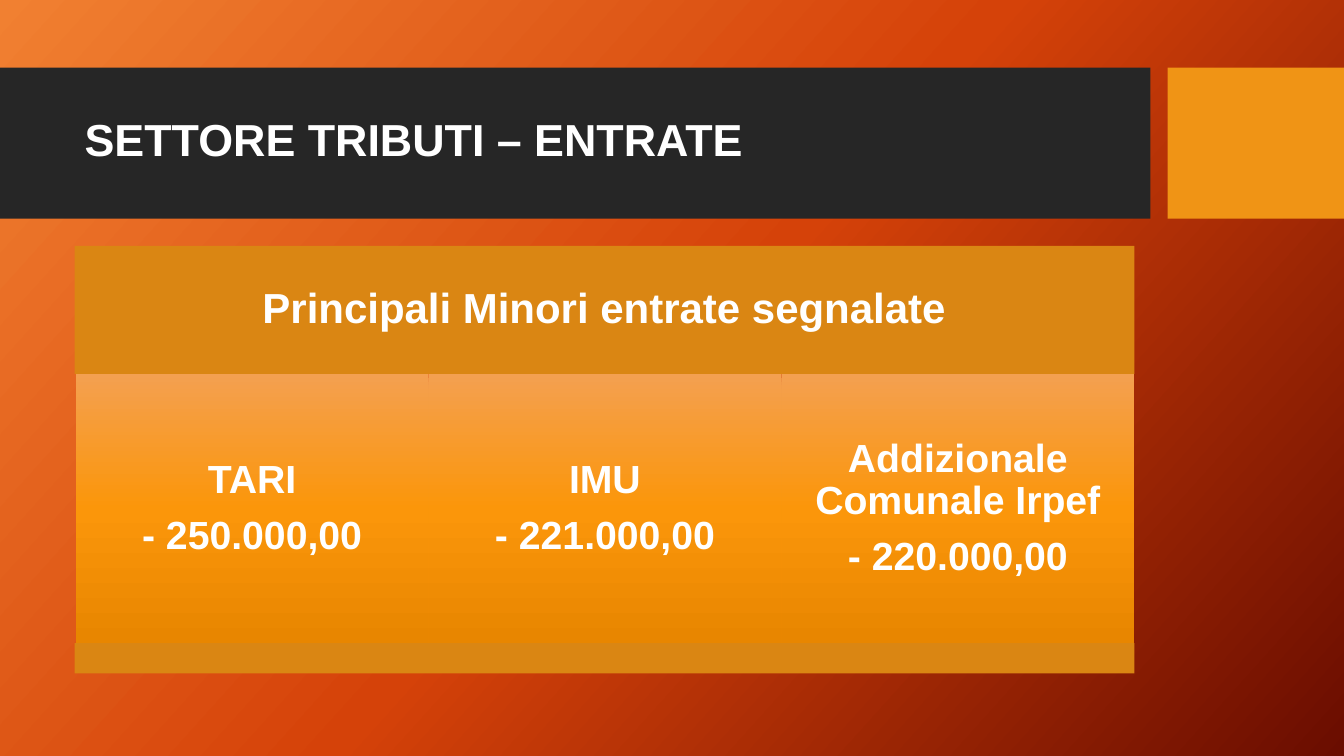
from lxml.etree import SubElement
from pptx import Presentation
from pptx.dml.color import RGBColor
from pptx.enum.shapes import MSO_SHAPE
from pptx.enum.text import MSO_ANCHOR, PP_ALIGN
from pptx.oxml.ns import qn
from pptx.util import Inches, Pt

TITLE = "SETTORE TRIBUTI – ENTRATE"
HEADING = "Principali Minori entrate segnalate"
REVENUES = [
    ("TARI", "- 250.000,00"),
    ("IMU", "- 221.000,00"),
    ("Addizionale Comunale Irpef", "- 220.000,00"),
]
PAGE_STOPS = [(0, "F18031"), (50, "D54209"), (100, "6A0D00")]
CARD_STOPS = [(0, "F4A050"), (50, "FB960A"), (100, "E88600")]
DARK, ACCENT, BAND, WHITE = "262626", "F09415", "DA8613", "FFFFFF"

TABLE_LEFT, TABLE_WIDTH = 0.74, 10.51
HEADING_TOP, HEADING_HEIGHT = 2.44, 1.27
CARD_LEFT, CARD_WIDTH, CARD_HEIGHT = 0.75, 3.5, 2.67
CARD_TOP = HEADING_TOP + HEADING_HEIGHT


def color(value):
    return RGBColor.from_string(value)


def set_gradient(fill, element, stops, angle):
    fill.gradient()
    gradient = next(element.iter(qn("a:gradFill")))
    stop_list = gradient.find(qn("a:gsLst"))
    for stop in list(stop_list):
        stop_list.remove(stop)
    for position, value in stops:
        stop = SubElement(stop_list, qn("a:gs"), pos=str(position * 1000))
        SubElement(stop, qn("a:srgbClr"), val=value)
    gradient.find(qn("a:lin")).set("ang", str(angle * 60000))


def add_block(left, top, width, height, fill):
    box = page.shapes.add_shape(
        MSO_SHAPE.RECTANGLE, Inches(left), Inches(top), Inches(width), Inches(height))
    box.shadow.inherit = False
    box.line.fill.background()
    if isinstance(fill, str):
        box.fill.solid()
        box.fill.fore_color.rgb = color(fill)
    else:
        set_gradient(box.fill, box.element, fill, 90)
    return box


def write(box, lines, size, align=PP_ALIGN.CENTER, inset=0.12):
    frame = box.text_frame
    frame.word_wrap = True
    frame.vertical_anchor = MSO_ANCHOR.MIDDLE
    frame.margin_left = frame.margin_right = Inches(inset)
    frame.margin_top = frame.margin_bottom = Inches(inset)
    frame.text = "\n".join(lines)
    for para in frame.paragraphs:
        para.alignment = align
        para.line_spacing = 0.9
        para.space_after = Pt(size * 0.35)
        for span in para.runs:
            span.font.name = "Arial"
            span.font.size = Pt(size)
            span.font.bold = True
            span.font.color.rgb = color(WHITE)


deck = Presentation()
deck.slide_width, deck.slide_height = Inches(13.33), Inches(7.5)
page = deck.slides.add_slide(deck.slide_layouts[6])
set_gradient(page.background.fill, page.element, PAGE_STOPS, 42)

add_block(0, 0.67, 11.41, 1.5, DARK)
add_block(11.58, 0.67, 1.75, 1.5, ACCENT)
title = page.shapes.add_textbox(Inches(0.74), Inches(0.82), Inches(10.51), Inches(1.18))
write(title, [TITLE], 32, PP_ALIGN.LEFT, 0.1)

heading = add_block(TABLE_LEFT, HEADING_TOP, TABLE_WIDTH, HEADING_HEIGHT, BAND)
write(heading, [HEADING], 30)
for index, lines in enumerate(REVENUES):
    card = add_block(CARD_LEFT + index * CARD_WIDTH, CARD_TOP,
                     CARD_WIDTH, CARD_HEIGHT, CARD_STOPS)
    write(card, lines, 28)
add_block(TABLE_LEFT, CARD_TOP + CARD_HEIGHT, TABLE_WIDTH, 0.3, BAND)

deck.save("out.pptx")
